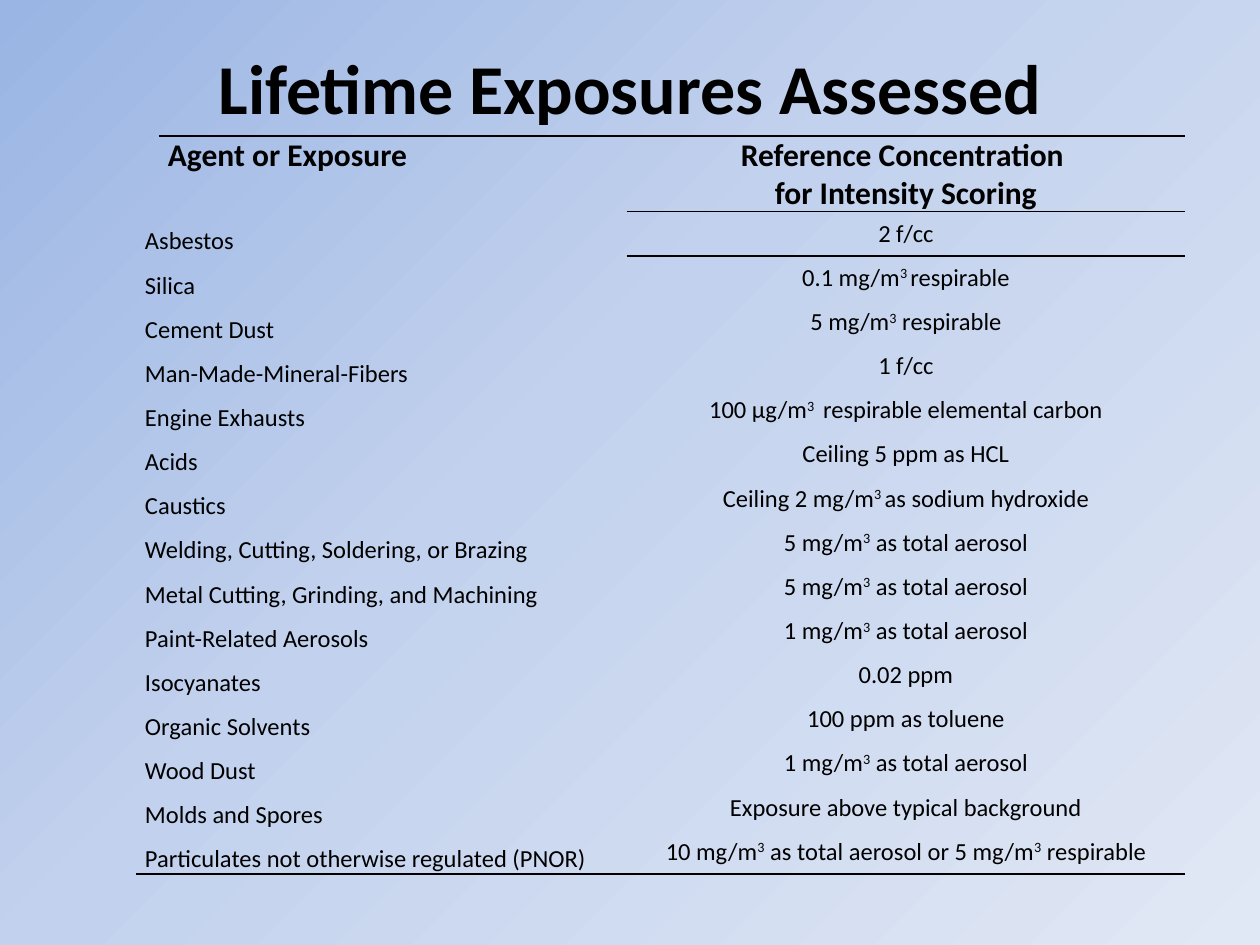
"""Build a slide that tabulates lifetime exposures and their reference concentrations."""
import lxml.etree
import pptx
import pptx.dml.color
import pptx.enum.text
import pptx.oxml
import pptx.oxml.ns
import pptx.util

TITLE = "Lifetime Exposures Assessed"
HEADINGS = ["Agent or Exposure", ["Reference Concentration ", "for Intensity Scoring"]]
AEROSOL = " as total aerosol"
EXPOSURES = [
    ("Asbestos", ["2 f/cc"]),
    ("Silica", ["0.1 mg/m", "3 ", "respirable"]),
    ("Cement Dust", ["5 mg/m", "3", " respirable"]),
    ("Man-Made-Mineral-Fibers", ["1 f/cc"]),
    ("Engine Exhausts", ["100 µg/m", "3 ", " respirable elemental carbon"]),
    ("Acids", ["Ceiling 5 ppm as HCL"]),
    ("Caustics", ["Ceiling 2 mg/m", "3 ", "as sodium hydroxide"]),
    ("Welding, Cutting, Soldering, or Brazing", ["5 mg/m", "3", AEROSOL]),
    ("Metal Cutting, Grinding, and Machining", ["5 mg/m", "3", AEROSOL]),
    ("Paint-Related Aerosols", ["1 mg/m", "3", AEROSOL]),
    ("Isocyanates", ["0.02 ppm"]),
    ("Organic Solvents", ["100 ppm as toluene"]),
    ("Wood Dust", ["1 mg/m", "3", AEROSOL]),
    ("Molds and Spores", ["Exposure above typical background"]),
    ("Particulates not otherwise regulated (PNOR)",
     ["10 mg/m", "3", AEROSOL + " or 5 mg/m", "3", " respirable"]),
]
COLORS = {"ink": "000000", "start": "9AB5E4", "middle": "C2D1ED", "end": "E1E8F5"}
STOPS = [(0, "start", 100), (44, "middle", 46), (100, "end", 100)]
FONT = "Calibri"
COLUMNS = [13, 468, 558]
HEADER_HEIGHT, ROW_HEIGHT = 72, 42
SUPERSCRIPT = "30000"
PLAIN_STYLE = "{2D5ABB26-0587-4C30-8999-92F81FD0307C}"
CENTER = pptx.enum.text.PP_ALIGN.CENTER
LEFT = pptx.enum.text.PP_ALIGN.LEFT
MIDDLE = pptx.enum.text.MSO_ANCHOR.MIDDLE
NAMESPACES = pptx.oxml.ns.nsdecls("a", "p")


def px(length):
    return pptx.util.Emu(round(length * 914400 / 126))


def paint_background(slide):
    stops = "".join(
        f'<a:gs pos="{place * 1000}"><a:srgbClr val="{COLORS[name]}">'
        f'<a:alpha val="{opacity * 1000}"/></a:srgbClr></a:gs>'
        for place, name, opacity in STOPS)
    background = pptx.oxml.parse_xml(
        f'<p:bg {NAMESPACES}><p:bgPr><a:gradFill rotWithShape="1"><a:gsLst>{stops}</a:gsLst>'
        '<a:lin ang="2700000" scaled="0"/></a:gradFill><a:effectLst/></p:bgPr></p:bg>')
    slide.element.cSld.insert(0, background)


def write(para, pieces, size, bold=False, align=LEFT, spacing=None):
    para.alignment = align
    if spacing:
        para.line_spacing = spacing
    for index, piece in enumerate(pieces):
        span = para.add_run()
        span.text = piece
        span.font.size = pptx.util.Pt(size)
        span.font.name = FONT
        span.font.bold = bold
        span.font.color.rgb = pptx.dml.color.RGBColor.from_string(COLORS["ink"])
        if index % 2:
            span.font._element.set("baseline", SUPERSCRIPT)


def rule(cell, *sides):
    for side in sides:
        line = pptx.oxml.parse_xml(
            f'<a:{side} {NAMESPACES} w="12700"><a:solidFill><a:srgbClr val="{COLORS["ink"]}"/>'
            f'</a:solidFill></a:{side}>')
        cell._tc.get_or_add_tcPr().insert(0, line)


def add_title(slide):
    box = slide.shapes.add_textbox(px(63), px(38), px(1134), px(98))
    box.text_frame.word_wrap = True
    box.text_frame.vertical_anchor = MIDDLE
    write(box.text_frame.paragraphs[0], [TITLE], 40, True, CENTER)


def add_exposure_table(slide):
    height = HEADER_HEIGHT + ROW_HEIGHT * len(EXPOSURES)
    frame = slide.shapes.add_table(len(EXPOSURES) + 1, len(COLUMNS), px(136), px(136),
                                   px(sum(COLUMNS)), px(height))
    table = frame.table
    table.first_row = table.horz_banding = False
    next(frame._element.iter(pptx.oxml.ns.qn("a:tableStyleId"))).text = PLAIN_STYLE
    for column, width in zip(table.columns, COLUMNS):
        column.width = px(width)
    for index, row in enumerate(table.rows):
        row.height = px(ROW_HEIGHT if index else HEADER_HEIGHT)
    for cell in table.iter_cells():
        cell.fill.background()
        cell.margin_left = cell.margin_right = px(9)
        cell.margin_top = cell.margin_bottom = 0

    agent, reference = table.cell(0, 1), table.cell(0, 2)
    write(agent.text_frame.paragraphs[0], [HEADINGS[0]], 18, True)
    rule(agent, "lnT")
    first, second = HEADINGS[1]
    write(reference.text_frame.paragraphs[0], [first], 18, True, CENTER)
    write(reference.text_frame.add_paragraph(), [second], 18, True, CENTER)
    rule(reference, "lnB", "lnT")

    for index, (name, concentration) in enumerate(EXPOSURES, start=1):
        agent, reference = table.cell(index, 0), table.cell(index, 2)
        agent.merge(table.cell(index, 1))
        write(agent.text_frame.paragraphs[0], [name], 14, spacing=1.5)
        reference.vertical_anchor = MIDDLE
        write(reference.text_frame.paragraphs[0], concentration, 14, align=CENTER)
    rule(table.cell(1, 2), "lnT")
    for column in range(len(COLUMNS)):
        rule(table.cell(len(EXPOSURES), column), "lnB")


def main():
    deck = pptx.Presentation()
    deck.slide_width, deck.slide_height = px(1260), px(945)
    page = deck.slides.add_slide(deck.slide_layouts[6])
    paint_background(page)
    add_title(page)
    add_exposure_table(page)
    deck.save("out.pptx")


if __name__ == "__main__":
    main()
